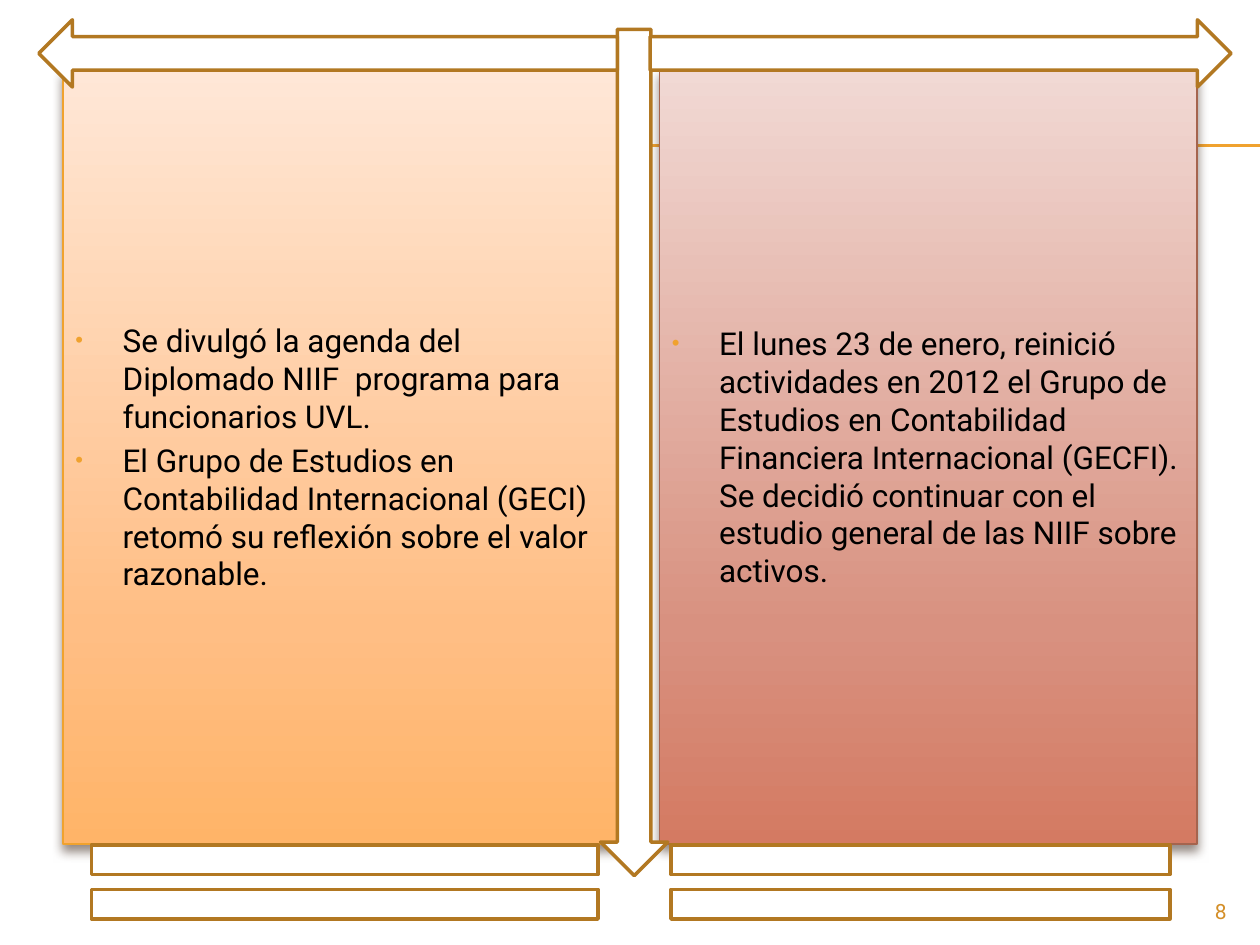
from lxml import etree
from pptx import Presentation
from pptx.dml.color import RGBColor
from pptx.enum.shapes import MSO_CONNECTOR, MSO_SHAPE as SHAPE
from pptx.enum.text import MSO_ANCHOR as ANCHOR, PP_ALIGN as ALIGN
from pptx.oxml import parse_xml
from pptx.oxml.ns import nsdecls, qn
from pptx.util import Pt

FONT = "Roboto"
AMBER, BRONZE, RUST = "F0A22E", "B27822", "A5644E"
LEFT_STOPS = [(0, "FFE7D7"), (72, "FFBE84"), (100, "FFB468")]
RIGHT_STOPS = [(0, "F1D9D4"), (72, "D89180"), (100, "D47A62")]
LEFT_TEXT = [
    "Se divulgó la agenda del Diplomado NIIF  programa para funcionarios UVL.",
    "El Grupo de Estudios en Contabilidad Internacional (GECI) retomó su "
    "reflexión sobre el valor razonable.",
]
RIGHT_TEXT = [
    "El lunes 23 de enero, reinició actividades en 2012 el Grupo de Estudios en "
    "Contabilidad Financiera Internacional (GECFI). Se decidió continuar con el "
    "estudio general de las NIIF sobre activos.",
]


def rgb(color):
    return RGBColor.from_string(color)


def add_run(p, text, size, color):
    r = p.add_run()
    r.text = text
    r.font.name, r.font.size = FONT, Pt(size)
    r.font.color.rgb = rgb(color)


def add_box(s, kind, box, line, width):
    sp = s.shapes.add_shape(kind, *map(Pt, box))
    sp.shadow.inherit = False
    sp.line.color.rgb = rgb(line)
    sp.line.width = Pt(width)
    return sp


def set_gradient(sp, stops):
    sp.fill.gradient()
    sp.fill.gradient_angle = 270
    gs_list = sp.element.spPr.find(".//" + qn("a:gsLst"))
    gs_list.clear()
    for pos, color in stops:
        gs = etree.SubElement(gs_list, qn("a:gs"), pos=str(pos * 1000))
        etree.SubElement(gs, qn("a:srgbClr"), val=color)


def set_shadow(sp):
    sp.element.spPr.find(qn("a:effectLst")).append(parse_xml(
        f'<a:outerShdw {nsdecls("a")} blurRad="{Pt(6)}" dist="{Pt(4)}" '
        'dir="5400000" rotWithShape="0"><a:srgbClr val="4E3B30">'
        '<a:alpha val="60000"/></a:srgbClr></a:outerShdw>'))


def set_bullet(p, indent):
    pPr = p._p.get_or_add_pPr()
    pPr.set("marL", str(Pt(indent)))
    pPr.set("indent", str(-Pt(indent)))
    color = etree.SubElement(pPr, qn("a:buClr"))
    etree.SubElement(color, qn("a:srgbClr"), val=AMBER)
    etree.SubElement(pPr, qn("a:buSzPct"), val="70000")
    etree.SubElement(pPr, qn("a:buFont"), typeface="Arial")
    etree.SubElement(pPr, qn("a:buChar"), char="•")


def add_rules(s, x, y, right):
    """Double hairline behind the panels."""
    for offset in (0, 0.6):
        cx = s.shapes.add_connector(MSO_CONNECTOR.STRAIGHT, Pt(x), Pt(y + offset),
                                    Pt(right), Pt(y + offset))
        cx.line.color.rgb = rgb(AMBER)
        cx.line.width = Pt(0.75)
        etree.SubElement(cx.element.spPr, qn("a:effectLst"))


def add_panel(s, box, stops, line, items):
    """Shaded panel with a bulleted list."""
    sp = add_box(s, SHAPE.RECTANGLE, box, line, 0.79)
    set_gradient(sp, stops)
    set_shadow(sp)
    tf = sp.text_frame
    tf.word_wrap = True
    tf.vertical_anchor = ANCHOR.MIDDLE
    for i, item in enumerate(items):
        p = tf.add_paragraph() if i else tf.paragraphs[0]
        p.alignment = ALIGN.LEFT
        p.space_before = Pt(3.6)
        set_bullet(p, 27)
        add_run(p, item, 18, "000000")


def add_frame(s):
    """Arrows and equal signs around the panels."""
    for kind, box in [
        (SHAPE.DOWN_ARROW, (343.2, 16.8, 38.4, 483.6)),
        (SHAPE.RIGHT_ARROW, (371.5, 11.3, 332, 38.4)),
        (SHAPE.LEFT_ARROW, (22.2, 11.3, 330.6, 38.4)),
        (SHAPE.MATH_EQUAL, (0, 468, 394, 72)),
        (SHAPE.MATH_EQUAL, (332, 468, 388, 72)),
    ]:
        sp = add_box(s, kind, box, BRONZE, 2)
        sp.fill.solid()
        sp.fill.fore_color.rgb = rgb("FFFFFF")


def add_page_number(s, box, number):
    tf = s.shapes.add_textbox(*map(Pt, box)).text_frame
    tf.word_wrap = True
    p = tf.paragraphs[0]
    p.alignment = ALIGN.RIGHT
    add_run(p, number, 12, "D48F29")


def main():
    prs = Presentation()
    prs.slide_width, prs.slide_height = Pt(720), Pt(540)
    s = prs.slides.add_slide(prs.slide_layouts[6])
    add_rules(s, 40, 82.8, 720)
    add_panel(s, (36, 39.6, 318, 442.8), LEFT_STOPS, AMBER, LEFT_TEXT)
    add_panel(s, (376.8, 39.6, 307.2, 442.8), RIGHT_STOPS, RUST, RIGHT_TEXT)
    add_frame(s)
    add_page_number(s, (648, 510, 60, 19.2), "8")
    prs.save("out.pptx")


if __name__ == "__main__":
    main()
